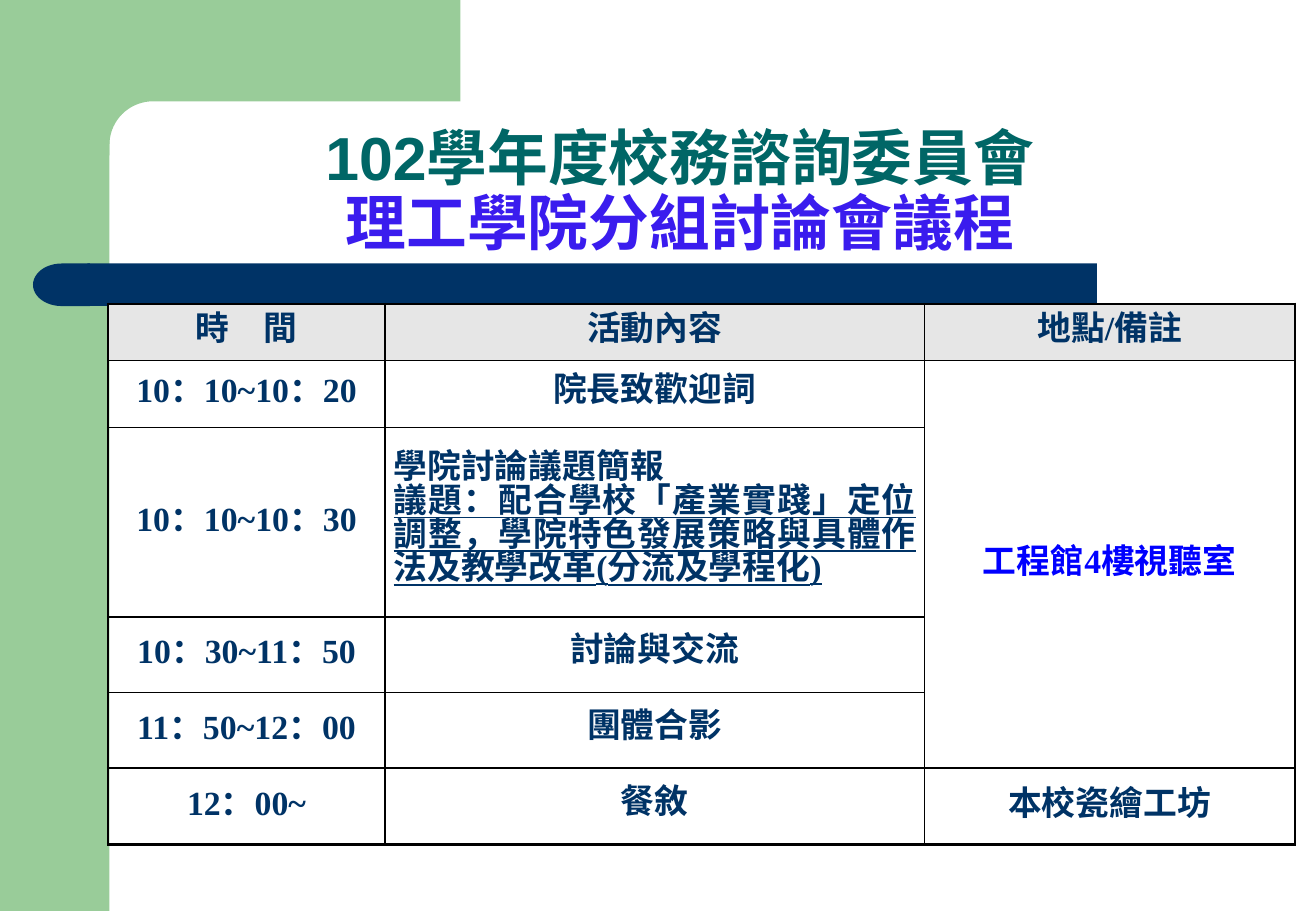
import math
from dataclasses import dataclass

import pptx
import pptx.util
import pptx.dml.color
import pptx.enum.shapes
import pptx.enum.text
import pptx.oxml
import pptx.oxml.ns

Cm, Pt = pptx.util.Cm, pptx.util.Pt
SHAPE = pptx.enum.shapes.MSO_SHAPE
ALIGN = pptx.enum.text.PP_ALIGN
ANCHOR = pptx.enum.text.MSO_ANCHOR


@dataclass(frozen=True)
class Theme:
    green: str = "99CC99"
    navy: str = "003366"
    teal: str = "006666"
    violet: str = "3A1CEE"
    blue: str = "0000FF"
    header: str = "E6E6E6"
    border: str = "000000"
    title_font: str = "Arial"
    table_font: str = "Times New Roman"
    title_size: int = 36
    table_size: int = 20
    outer: float = 1.5
    inner: float = 1


T = Theme()

COLUMNS = [5.79, 11.28, 7.75]
ROWS = [1.19, 1.4, 3.96, 1.58, 1.58, 1.6]
TOPIC = "議題：配合學校「產業實踐」定位調整，學院特色發展策略與具體作法及教學改革(分流及學程化)"
AGENDA = [
    ["時　間", "活動內容", "地點/備註"],
    ["10：10~10：20", "院長致歡迎詞", "工程館4樓視聽室"],
    ["10：10~10：30", "學院討論議題簡報", ""],
    ["10：30~11：50", "討論與交流", ""],
    ["11：50~12：00", "團體合影", ""],
    ["12：00~", "餐敘", "本校瓷繪工坊"],
]
BRIEFING, VENUE, VENUE_END = (2, 1), (1, 2), (4, 2)


def rgb(value):
    return pptx.dml.color.RGBColor.from_string(value)


def set_format(target, values):
    for name, value in values.items():
        setattr(target, name, value)


def add_text(p, text, color, font, size, underline=False):
    r = p.add_run()
    r.text = text
    set_format(r.font, {"name": font, "size": Pt(size), "bold": True})
    r.font.color.rgb = rgb(color)
    if underline:
        r.font.underline = True


def paint(sp, color):
    sp.shadow.inherit = False
    sp.fill.solid()
    sp.fill.fore_color.rgb = rgb(color)
    sp.line.fill.background()


def add_block(s, kind, box, color):
    sp = s.shapes.add_shape(kind, *map(Cm, box))
    paint(sp, color)
    return sp


def add_corner(s, x, y, w, h):
    """Green side strip and top band, joined by a rounded inner corner."""
    strip, band, radius = 2.29, 2.12, 0.91
    add_block(s, SHAPE.RECTANGLE, (x, y, strip, h), T.green)
    cx, cy = x + strip + radius, y + band + radius
    angles = [math.radians(a) for a in range(90, 181, 5)]
    arc = [(cx + radius * math.cos(a), cy - radius * math.sin(a)) for a in angles]
    left, bottom = x + 1.37, y + 3.25
    points = [(x + w, y), (x + w, y + band), *arc,
              (x + strip, bottom), (left, bottom), (left, y)]
    start, *rest = [(Cm(px), Cm(py)) for px, py in points]
    fb = s.shapes.build_freeform(*start)
    fb.add_line_segments(rest)
    paint(fb.convert_to_shape(), T.green)


def add_bar(s, x, y, w, h):
    """Navy bar with a round left end."""
    cap = 1.19
    add_block(s, SHAPE.RECTANGLE, (x + cap - 0.05, y, w - cap + 0.05, h), T.navy)
    add_block(s, SHAPE.FLOWCHART_DELAY, (x, y, cap, h), T.navy).rotation = 180


def add_title(s, x, y, w, h):
    """Two-line title in the title placeholder."""
    sp = s.shapes.title
    set_format(sp, {"left": Cm(x), "top": Cm(y), "width": Cm(w), "height": Cm(h)})
    tf = sp.text_frame
    set_format(tf, {"vertical_anchor": ANCHOR.BOTTOM, "word_wrap": True,
                    "auto_size": pptx.enum.text.MSO_AUTO_SIZE.NONE})
    p = tf.paragraphs[0]
    set_format(p, {"alignment": ALIGN.CENTER, "line_spacing": 0.9,
                   "space_after": Pt(12)})
    add_text(p, "102學年度校務諮詢委員會", T.teal, T.title_font, T.title_size)
    p.add_line_break()
    add_text(p, "理工學院分組討論會議程", T.violet, T.title_font, T.title_size)


def set_borders(cell, row, col):
    """Thick lines on the table's outline, thin lines inside."""
    outline = {"L": col == 0, "R": col == len(COLUMNS) - 1,
               "T": row == 0, "B": row == len(ROWS) - 1}
    tcPr = cell._tc.get_or_add_tcPr()
    for i, (side, is_outer) in enumerate(outline.items()):
        width = Pt(T.outer if is_outer else T.inner)
        tcPr.insert(i, pptx.oxml.parse_xml(
            f'<a:ln{side} {pptx.oxml.ns.nsdecls("a")} w="{width}"><a:solidFill>'
            f'<a:srgbClr val="{T.border}"/></a:solidFill></a:ln{side}>'))


def fill_cell(cell, row, col, text):
    set_format(cell, {"vertical_anchor": ANCHOR.MIDDLE,
                      "margin_left": Cm(0.18), "margin_right": Cm(0.18),
                      "margin_top": 0, "margin_bottom": 0})
    if row == 0:
        cell.fill.solid()
        cell.fill.fore_color.rgb = rgb(T.header)
    else:
        cell.fill.background()
    set_borders(cell, row, col)
    if not text:
        return
    briefing = (row, col) == BRIEFING
    color = T.blue if (row, col) == VENUE else T.navy
    spacing = Pt(20 if col == 1 and row > 0 else 22)
    p = cell.text_frame.paragraphs[0]
    set_format(p, {"alignment": ALIGN.LEFT if briefing else ALIGN.CENTER,
                   "line_spacing": spacing})
    add_text(p, text, color, T.table_font, T.table_size)
    if briefing:
        p = cell.text_frame.add_paragraph()
        set_format(p, {"alignment": ALIGN.JUSTIFY, "line_spacing": spacing})
        add_text(p, TOPIC, color, T.table_font, T.table_size, underline=True)


def add_agenda(s, x, y, w, h):
    """Agenda table with one venue shared by four rows."""
    box = map(Cm, (x, y, w, h))
    table = s.shapes.add_table(len(ROWS), len(COLUMNS), *box).table
    set_format(table, {"first_row": False, "horz_banding": False})
    for column, width in zip(table.columns, COLUMNS):
        column.width = Cm(width)
    for row, height in zip(table.rows, ROWS):
        row.height = Cm(height)
    table.cell(*VENUE).merge(table.cell(*VENUE_END))
    for i, texts in enumerate(AGENDA):
        for j, text in enumerate(texts):
            fill_cell(table.cell(i, j), i, j, text)


def main():
    prs = pptx.Presentation()
    set_format(prs, {"slide_width": Cm(27.52), "slide_height": Cm(19.05)})
    s = prs.slides.add_slide(prs.slide_layouts[5])
    add_corner(s, 0, 0, 9.63, 19.05)
    add_bar(s, 0.69, 5.51, 22.25, 0.89)
    add_title(s, 2.29, 2.11, 23.85, 3.43)
    add_agenda(s, 2.26, 6.35, sum(COLUMNS), sum(ROWS))
    # Keep the title above the background shapes
    s.shapes._spTree.append(s.shapes.title._element)
    prs.save("out.pptx")


if __name__ == "__main__":
    main()
